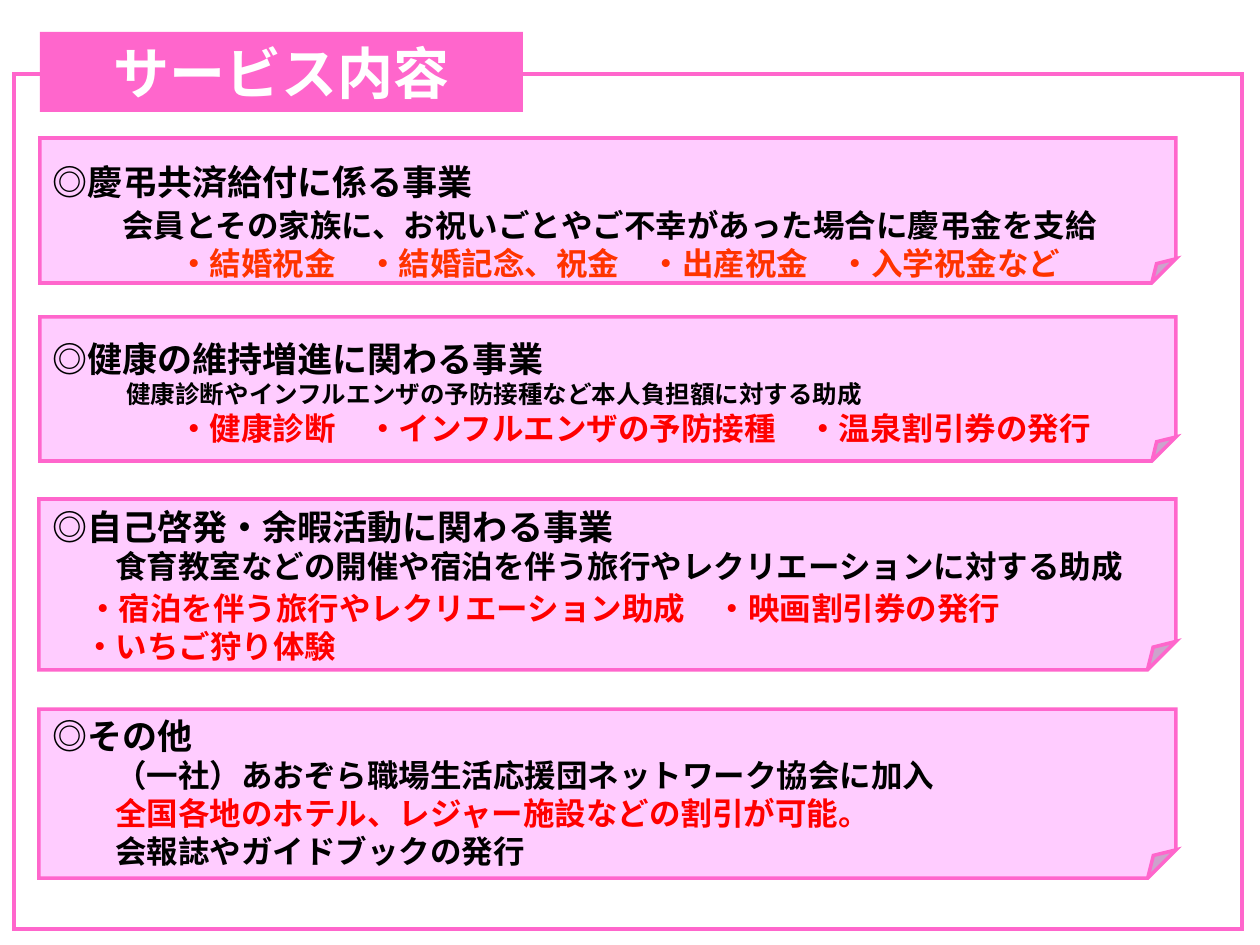
from pptx import Presentation
from pptx import util as u
from pptx.dml.color import RGBColor
from pptx.enum import shapes, text
from pptx.oxml import parse_xml
from pptx.oxml.ns import nsdecls
from dataclasses import dataclass


@dataclass(frozen=True)
class Theme:
    font: str = "Noto Sans CJK JP"
    pink: str = "FF66CC"
    pale: str = "FFCCFF"
    white: str = "FFFFFF"
    black: str = "000000"
    red: str = "FF0000"
    warm: str = "FF3300"
    title: int = 32
    head: int = 20
    body: int = 18
    small: int = 14
    lead: float = 1.2


T = Theme()

# Each note: its box, its text box, then lines of
# (words, size, colour, indent in px, size that sets the line height)
NOTES = [
    ((40, 138, 1136, 145), (40, 154, 1081, 136), [
        ("◎慶弔共済給付に係る事業", T.head, T.black, 0, T.head),
        ("会員とその家族に、お祝いごとやご不幸があった場合に慶弔金を支給",
         T.body, T.black, 70, T.head),
        ("・結婚祝金　・結婚記念、祝金　・出産祝金　・入学祝金など",
         T.body, T.warm, 126, T.body),
    ]),
    ((40, 317, 1136, 144), (40, 331, 1136, 123), [
        ("◎健康の維持増進に関わる事業", T.head, T.black, 0, T.head),
        ("健康診断やインフルエンザの予防接種など本人負担額に対する助成",
         T.small, T.black, 74, T.small),
        ("・健康診断　・インフルエンザの予防接種　・温泉割引券の発行",
         T.body, T.red, 126, T.body),
    ]),
    ((39, 499, 1137, 171), (40, 499, 1136, 174), [
        ("◎自己啓発・余暇活動に関わる事業", T.head, T.black, 0, T.head),
        ("食育教室などの開催や宿泊を伴う旅行やレクリエーションに対する助成",
         T.body, T.black, 63, T.body),
        ("・宿泊を伴う旅行やレクリエーション助成　・映画割引券の発行",
         T.body, T.red, 35, T.head),
        ("・いちご狩り体験", T.body, T.red, 32, T.body),
    ]),
    ((39, 709, 1137, 169), (40, 708, 1136, 169), [
        ("◎その他", T.head, T.black, 0, T.head),
        ("（一社）あおぞら職場生活応援団ネットワーク協会に加入",
         T.body, T.black, 63, T.body),
        ("全国各地のホテル、レジャー施設などの割引が可能。",
         T.body, T.red, 63, T.body),
        ("会報誌やガイドブックの発行", T.body, T.black, 63, T.body),
    ]),
]


def px(n):
    return u.Emu(round(n * 914400 / 126))


def rgb(code):
    return RGBColor.from_string(code)


def add_box(slide, kind, box, fill=None, line=None, width=2):
    shape = slide.shapes.add_shape(kind, *map(px, box))
    shape.shadow.inherit = False
    if fill:
        shape.fill.solid()
        shape.fill.fore_color.rgb = rgb(fill)
    else:
        shape.fill.background()
    if line:
        shape.line.color.rgb = rgb(line)
        shape.line.width = u.Pt(width)
        shape.line._ln.append(
            parse_xml(f'<a:miter {nsdecls("a")} lim="800000"/>'))
    else:
        shape.line.fill.background()
    return shape


def write(para, words, size, color):
    """Set the words and the font, for Latin and East Asian script alike."""
    run = para.add_run()
    run.text = words
    for part in (para, run):
        font = part.font
        font.name, font.size, font.bold = T.font, u.Pt(size), True
        font.color.rgb = rgb(color)
        font._rPr.append(
            parse_xml(f'<a:ea {nsdecls("a")} typeface="{T.font}"/>'))


def add_lines(slide, box, lines):
    frame = slide.shapes.add_textbox(*map(px, box)).text_frame
    frame.word_wrap = True
    for i, (words, size, color, indent, tall) in enumerate(lines):
        para = frame.add_paragraph() if i else frame.paragraphs[0]
        para.line_spacing = u.Pt(round(tall * T.lead, 1))
        write(para, words, size, color)
        para._p.pPr.set("marL", str(px(indent)))


def add_title(slide, box, words):
    shape = add_box(slide, shapes.MSO_SHAPE.RECTANGLE, box, T.pink)
    frame = shape.text_frame
    frame.margin_top = frame.margin_bottom = 0
    frame.vertical_anchor = text.MSO_ANCHOR.MIDDLE
    para = frame.paragraphs[0]
    para.alignment = text.PP_ALIGN.CENTER
    write(para, words, T.title, T.white)


def main():
    deck = Presentation()
    deck.slide_width, deck.slide_height = px(1260), px(945)
    slide = deck.slides.add_slide(deck.slide_layouts[6])
    for box, _, _ in reversed(NOTES):
        add_box(slide, shapes.MSO_SHAPE.FOLDED_CORNER, box, T.pale, T.pink)
    add_box(slide, shapes.MSO_SHAPE.RECTANGLE, (14, 74, 1228, 855),
            line=T.pink, width=2.25)
    for _, area, lines in NOTES:
        add_lines(slide, area, lines)
    add_title(slide, (40, 32, 483, 80), "サービス内容")
    deck.save("out.pptx")


if __name__ == "__main__":
    main()
